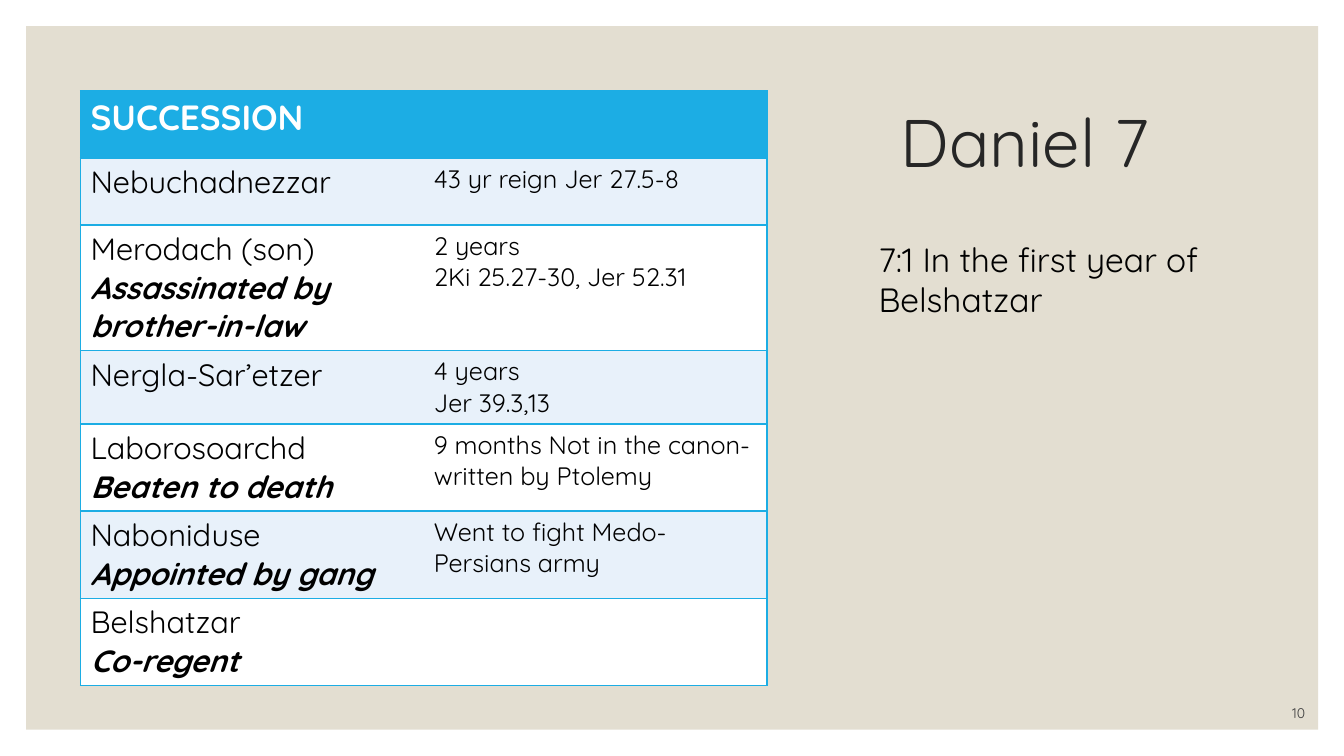
"""Build the Daniel 7 slide with the table of Babylonian succession."""
from lxml.etree import SubElement
from pptx import Presentation
from pptx.dml.color import RGBColor
from pptx.enum.shapes import MSO_SHAPE as Preset
from pptx.enum.text import MSO_ANCHOR as Anchor, MSO_AUTO_SIZE as AutoSize, PP_ALIGN as Align
from pptx.oxml.ns import qn
from pptx.util import Cm, Pt

BLUE, PALE, WHITE, BLACK = "1CADE4", "E8F1FA", "FFFFFF", "000000"
SAND, TITLE_GREY, NUMBER_GREY = "E3DED1", "262626", "404040"

RULERS = [
    ("Nebuchadnezzar", None, ["43 yr reign Jer 27.5-8"]),
    ("Merodach (son)", "Assassinated by brother-in-law",
     ["2 years", "2Ki 25.27-30, Jer 52.31"]),
    ("Nergla-Sar’etzer", None, ["4 years", "Jer 39.3,13"]),
    ("Laborosoarchd", "Beaten to death", ["9 months Not in the canon-written by Ptolemy"]),
    ("Naboniduse", "Appointed by gang", ["Went to fight Medo-Persians army"]),
    ("Belshatzar", "Co-regent", []),
]


def paint(target, colour):
    """Give a fill or a font a solid colour."""
    if hasattr(target, "solid"):
        target.solid()
        target.fore_color.rgb = RGBColor.from_string(colour)
    else:
        target.color.rgb = RGBColor.from_string(colour)


class SlideBuilder:
    """Hold the style and the current slide."""

    font = "Quicksand"

    def __init__(self, slide):
        self.slide = slide

    def set_lines(self, frame, lines, align=None, spacing=None):
        """Set (text, size, colour, extra formats) lines, one to a paragraph."""
        for number, (text, size, colour, formats) in enumerate(lines):
            paragraph = frame.paragraphs[0] if number == 0 else frame.add_paragraph()
            paragraph.alignment = align
            paragraph.line_spacing = spacing
            run = paragraph.add_run()
            run.text = text
            style = {"name": self.font, "size": Pt(size), "bold": False, "italic": False}
            for key, value in {**style, **formats}.items():
                setattr(run.font, key, value)
            paint(run.font, colour)

    def panel(self, box, colour):
        """Add a plain filled rectangle."""
        panel = self.slide.shapes.add_shape(Preset.RECTANGLE, *map(Cm, box))
        panel.shadow.inherit = False
        paint(panel.fill, colour)
        panel.line.fill.background()

    def title(self, box, text, size, colour):
        """Place and fill the title placeholder."""
        title = self.slide.shapes.title
        for key, value in zip(("left", "top", "width", "height"), box):
            setattr(title, key, Cm(value))
        title.text_frame.vertical_anchor = Anchor.MIDDLE
        self.set_lines(title.text_frame, [(text, size, colour, {})], Align.LEFT, 0.9)

    def text(self, box, text, size, colour, align=Align.LEFT, anchor=Anchor.TOP,
             fit=AutoSize.NONE):
        """Add a wrapping text box."""
        frame = self.slide.shapes.add_textbox(*map(Cm, box)).text_frame
        for key, value in {"word_wrap": True, "vertical_anchor": anchor,
                           "auto_size": fit}.items():
            setattr(frame, key, value)
        self.set_lines(frame, [(text, size, colour, {})], align)

    def borders(self, cell, sides):
        """Line the named sides of a cell and clear the others."""
        properties = cell._tc.get_or_add_tcPr()
        for place, side in enumerate("LRTB"):
            line = SubElement(properties, qn(f"a:ln{side}"), w=str(Pt(1)))
            if side in sides:
                solid = SubElement(line, qn("a:solidFill"))
                SubElement(solid, qn("a:srgbClr"), val=BLUE)
            else:
                SubElement(line, qn("a:noFill"))
            properties.insert(place, line)

    def table(self, box, rows, heights):
        """Add a two-column table from rows of (fill, left lines, right lines)."""
        table = self.slide.shapes.add_table(len(rows), 2, *map(Cm, box)).table
        table.horz_banding = False
        for row, height, (fill, *columns) in zip(table.rows, heights, rows):
            row.height = Cm(height)
            for cell, lines, sides in zip(row.cells, columns, ("LTB", "RTB")):
                paint(cell.fill, fill)
                self.borders(cell, sides)
                self.set_lines(cell.text_frame, lines)


def succession_rows():
    """Turn the rulers into table rows under a heading."""
    rows = [(BLUE, [("SUCCESSION", 25, WHITE, {"bold": True})], [])]
    for number, (ruler, fate, notes) in enumerate(RULERS):
        names = [(ruler, 22, BLACK, {})]
        if fate:
            names.append((fate, 22, BLACK, {"bold": True, "italic": True}))
        rows.append((WHITE if number % 2 else PALE, names,
                     [(note, 18, BLACK, {}) for note in notes]))
    return rows


def main():
    """Build and save the slide."""
    deck = Presentation()
    deck.slide_width, deck.slide_height = Cm(33.87), Cm(19.05)
    builder = SlideBuilder(deck.slides.add_slide(deck.slide_layouts[5]))
    paint(builder.slide.background.fill, WHITE)
    builder.panel((0.66, 0.66, 32.56, 17.73), SAND)
    shapes = builder.slide.shapes
    shapes._spTree.append(shapes.title._element)
    builder.title((22.45, 1.78, 8.46, 3.81), "Daniel 7", 48, TITLE_GREY)
    builder.table((2.03, 2.29, 17.3, 14.58), succession_rows(),
                  [1.69, 1.69, 3.07] + [1.69] * 4)
    builder.text((29.08, 17.53, 4.06, 0.76), "10", 10, NUMBER_GREY, Align.RIGHT, Anchor.BOTTOM)
    builder.text((21.89, 5.89, 9.02, 2.31), "7:1 In the first year of Belshatzar", 24, BLACK,
                 fit=AutoSize.SHAPE_TO_FIT_TEXT)
    deck.save("out.pptx")


if __name__ == "__main__":
    main()
